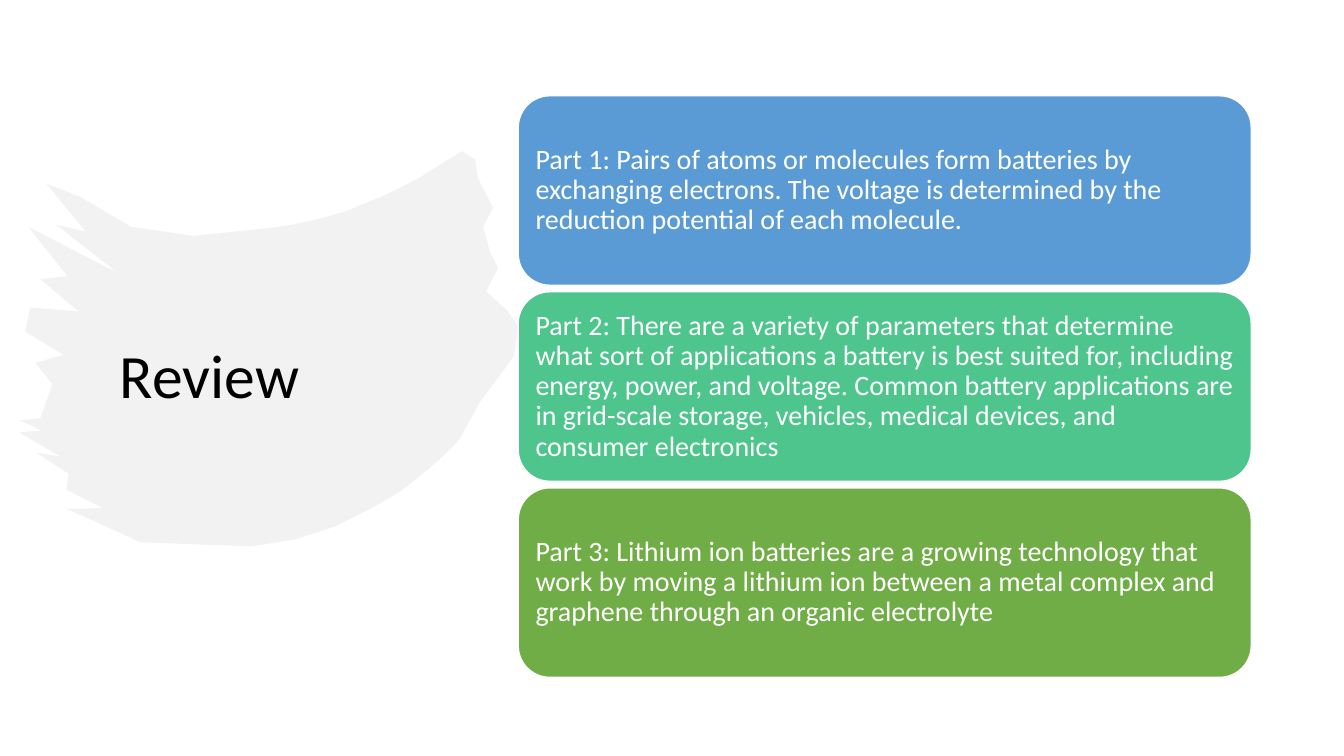
from lxml import etree
from pptx import Presentation
from pptx.dml.color import RGBColor
from pptx.enum.shapes import MSO_SHAPE
from pptx.enum.text import MSO_ANCHOR, PP_ALIGN
from pptx.oxml.ns import qn
from pptx.util import Inches, Pt

ROUNDED, MIDDLE, LEFT = MSO_SHAPE.ROUNDED_RECTANGLE, MSO_ANCHOR.MIDDLE, PP_ALIGN.LEFT
BLACK, WHITE = RGBColor(0, 0, 0), RGBColor(255, 255, 255)
BLUE, TEAL, GREEN = (RGBColor.from_string(c) for c in ("5B9BD5", "4DC58D", "70AD47"))
BRUSH_GREY = RGBColor(0xE7, 0xE6, 0xE6)

TITLE = "Review"
PARTS = [
    ("Part 1: Pairs of atoms or molecules form batteries by exchanging electrons. "
     "The voltage is determined by the reduction potential of each molecule.", BLUE),
    ("Part 2: There are a variety of parameters that determine what sort of applications "
     "a battery is best suited for, including energy, power, and voltage. Common battery "
     "applications are in grid-scale storage, vehicles, medical devices, and consumer "
     "electronics", TEAL),
    ("Part 3: Lithium ion batteries are a growing technology that work by moving a lithium "
     "ion between a metal complex and graphene through an organic electrolyte", GREEN),
]

# Brush stroke corners in hundredths of an inch; each edge is a smooth or ragged side
RIGHT_EDGE = [(458, 150), (471, 158), (474, 177), (489, 206), (479, 225), (486, 250),
              (494, 266), (482, 289), (503, 308), (514, 324), (510, 353), (476, 399)]
BOTTOM_CURVE = [(456, 435), (456, 436), (372, 533), (249, 542)]
LEFT_EDGE = [(139, 538), (96, 518), (66, 505), (102, 504), (66, 486), (68, 470),
             (36, 449), (60, 453), (19, 429), (41, 427), (20, 417), (40, 415),
             (52, 381), (35, 360), (63, 352), (25, 329), (30, 305), (78, 309),
             (40, 277), (67, 274), (28, 225), (117, 271), (56, 223), (85, 230),
             (46, 182), (79, 195), (130, 225), (192, 234)]
TOP_CURVE = [(260, 227), (342, 220), (400, 184), (423, 172)]
CURVE_STEPS = 8

# Column of cards, in inches
CARD_LEFT, CARD_TOP, CARD_W, CARD_H, CARD_GAP = 5.14, 0.95, 7.27, 1.88, 0.065


def bezier(a, b, c, d):
    points = []
    for step in range(CURVE_STEPS + 1):
        t = step / CURVE_STEPS
        u = 1 - t
        points.append(tuple(
            round(u**3 * i + 3 * u * u * t * j + 3 * u * t * t * k + t**3 * m)
            for i, j, k, m in zip(a, b, c, d)))
    return points


def write(sp, text, size, color):
    tf = sp.text_frame
    for name, value in dict(text=text, word_wrap=True, vertical_anchor=MIDDLE).items():
        setattr(tf, name, value)
    p = tf.paragraphs[0]
    p.alignment, p.line_spacing = LEFT, 0.9
    font = p.runs[0].font
    font.name, font.size, font.color.rgb = "Calibri", Pt(size), color
    return tf


def paint(sp, color):
    sp.shadow.inherit = False
    sp.fill.solid()
    sp.fill.fore_color.rgb = color


prs = Presentation()
prs.slide_width, prs.slide_height = Inches(13.33), Inches(7.5)
s = prs.slides.add_slide(prs.slide_layouts[5])

# Brush stroke, half transparent and behind the title
outline = RIGHT_EDGE + bezier(*BOTTOM_CURVE) + LEFT_EDGE + bezier(*TOP_CURVE)
builder = s.shapes.build_freeform(*outline[0], scale=Inches(0.01))
builder.add_line_segments(outline[1:], close=True)
brush = builder.convert_to_shape()
paint(brush, BRUSH_GREY)
brush.line.fill.background()
srgb = brush._element.spPr.find(qn("a:solidFill")).find(qn("a:srgbClr"))
etree.SubElement(srgb, qn("a:alpha"), val="50000")
s.shapes._spTree.insert(2, brush._element)

# Title
title = s.shapes.title
title.left, title.top, title.width, title.height = map(Inches, (1.09, 0.75, 3.82, 6.01))
write(title, TITLE, 44, BLACK)

# Cards
for row, (text, color) in enumerate(PARTS):
    top = CARD_TOP + row * (CARD_H + CARD_GAP)
    card = s.shapes.add_shape(ROUNDED, *map(Inches, (CARD_LEFT, top, CARD_W, CARD_H)))
    paint(card, color)
    card.line.color.rgb, card.line.width = WHITE, Pt(1)
    tf = write(card, text, 20, WHITE)
    # A rounded rectangle already insets its text by 0.09 inch
    for side in ("left", "right", "top", "bottom"):
        setattr(tf, f"margin_{side}", Inches(0.08))

prs.save("out.pptx")
